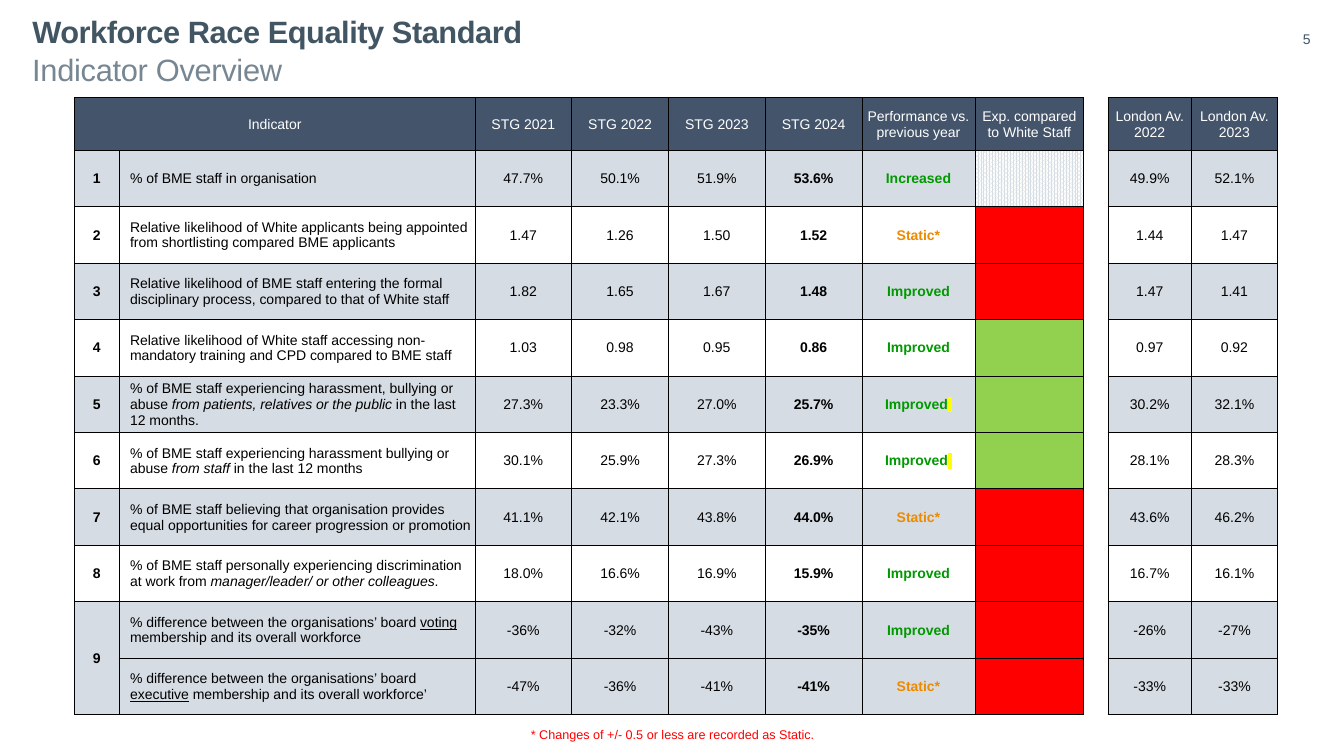
from lxml import etree
from pptx import Presentation
from pptx.dml.color import RGBColor
from pptx.enum.dml import MSO_PATTERN
from pptx.enum.text import MSO_ANCHOR as ANCHOR, MSO_AUTO_SIZE as AUTO_SIZE, PP_ALIGN as ALIGN
from pptx.oxml.ns import qn
from pptx.util import Pt

PX = 9144  # EMU in one px, at 100 px to the inch
FONT = "Arial"
COLORS = {
    "title": "425563", "subtitle": "768692", "header": "44546A", "band": "D6DCE4",
    "white": "FFFFFF", "black": "000000", "red": "FF0000", "green": "92D050",
    "dots": "D6DEE3", "better": "009900", "static": "ED8B00", "marker": "FFFF00",
}
RESULT_COLORS = {"Increased": "better", "Improved": "better", "Static*": "static"}

COLUMN_WIDTHS = [44, 353, 96, 96, 96, 96, 112, 108, 17, 83, 85]
LATEST, RESULT, COMPARED, GAP = 5, 6, 7, 8
HEADER_HEIGHT, ROW_HEIGHT = 52, 56
HEADERS = [
    "Indicator", "", "STG 2021", "STG 2022", "STG 2023", "STG 2024",
    "Performance vs. previous year", "Exp. compared to White Staff", "",
    "London Av. 2022", "London Av. 2023",
]
# number, indicator (_underlined_ or *italic* words), four years, result, comparison, London
INDICATORS = [
    ("1", "% of BME staff in organisation",
     "47.7% 50.1% 51.9% 53.6%", "Increased", "dots", "49.9% 52.1%"),
    ("2", "Relative likelihood of White applicants being appointed from shortlisting compared BME applicants",
     "1.47 1.26 1.50 1.52", "Static*", "red", "1.44 1.47"),
    ("3", "Relative likelihood of BME staff entering the formal disciplinary process, compared to that of White staff",
     "1.82 1.65 1.67 1.48", "Improved", "red", "1.47 1.41"),
    ("4", "Relative likelihood of White staff accessing non-mandatory training and CPD compared to BME staff",
     "1.03 0.98 0.95 0.86", "Improved", "green", "0.97 0.92"),
    ("5", "% of BME staff experiencing harassment, bullying or abuse *from patients, relatives or the public* in the last 12 months.",
     "27.3% 23.3% 27.0% 25.7%", "Improved", "green", "30.2% 32.1%"),
    ("6", "% of BME staff experiencing harassment bullying or abuse *from staff* in the last 12 months",
     "30.1% 25.9% 27.3% 26.9%", "Improved", "green", "28.1% 28.3%"),
    ("7", "% of BME staff believing that organisation provides equal opportunities for career progression or promotion",
     "41.1% 42.1% 43.8% 44.0%", "Static*", "red", "43.6% 46.2%"),
    ("8", "% of BME staff personally experiencing discrimination at work from *manager/leader/ or other colleagues*.",
     "18.0% 16.6% 16.9% 15.9%", "Improved", "red", "16.7% 16.1%"),
    ("9", "% difference between the organisations’ board _voting_ membership and its overall workforce",
     "-36% -32% -43% -35%", "Improved", "red", "-26% -27%"),
    ("", "% difference between the organisations’ board _executive_ membership and its overall workforce’",
     "-47% -36% -41% -41%", "Static*", "red", "-33% -33%"),
]
HIGHLIGHTED = ("5", "6")


def rgb(name):
    return RGBColor.from_string(COLORS[name])


def set_font(font, size, color, bold=False):
    font.name, font.size, font.bold = FONT, Pt(size), bold
    font.color.rgb = rgb(color)


def place_text(shape, box, text, size, color, bold=False, align=ALIGN.LEFT, inset=(0, 0), spacing=0):
    """Write one line in a text shape; spacing is in hundredths of a point."""
    shape.left, shape.top, shape.width, shape.height = (length * PX for length in box)
    frame = shape.text_frame
    frame.word_wrap, frame.auto_size = True, AUTO_SIZE.NONE
    frame.vertical_anchor = ANCHOR.TOP
    frame.margin_left = frame.margin_right = inset[0] * PX
    frame.margin_top = frame.margin_bottom = inset[1] * PX
    para = frame.paragraphs[0]
    para.alignment = align
    span = para.add_run()
    span.text = text
    set_font(para.font, size, color, bold)
    if spacing:
        span._r.get_or_add_rPr().set("spc", str(spacing))
    return para


def add_text(slide, box, *args, **options):
    return place_text(slide.shapes.add_textbox(0, 0, 0, 0), box, *args, **options)


def add_heading(slide, box):
    left, top, width, height = box
    para = place_text(slide.shapes.title, (left, top, width, 33),
                      "Workforce Race Equality Standard", 22, "title", bold=True, spacing=-30)
    para.line_spacing = 0.9
    add_text(slide, (left, top + 33, width, height - 33), "Indicator Overview", 22, "subtitle", spacing=-20)


def set_borders(cell, sides):
    """Draw thin black lines on the named sides, and none on the others."""
    properties = cell._tc.get_or_add_tcPr()
    for position, side in enumerate("LRTB"):
        line = etree.Element(qn(f"a:ln{side}"), w=str(Pt(0.5)))
        if side in sides:
            fill = etree.SubElement(line, qn("a:solidFill"))
            etree.SubElement(fill, qn("a:srgbClr"), val=COLORS["black"])
        else:
            etree.SubElement(line, qn("a:noFill"))
        properties.insert(position, line)


def fill_cell(cell, color):
    if color is None:
        cell.fill.background()
    elif color == "dots":
        cell.fill.patterned()
        cell.fill.pattern = MSO_PATTERN.PERCENT_80
        cell.fill.fore_color.rgb, cell.fill.back_color.rgb = rgb("dots"), rgb("white")
    else:
        cell.fill.solid()
        cell.fill.fore_color.rgb = rgb(color)


def write_cell(cell, text, color="black", bold=False, align=ALIGN.CENTER):
    """Write text whose *starred* words are italic and _underscored_ words underlined."""
    cell.vertical_anchor = ANCHOR.MIDDLE
    cell.margin_left = (11 if align == ALIGN.LEFT else 1) * PX
    cell.margin_right = cell.margin_top = PX
    cell.margin_bottom = 0
    para = cell.text_frame.paragraphs[0]
    para.alignment = align
    mark = "_" if "_" in text else "*"
    pieces = text.split(mark) if text.count(mark) == 2 or mark == "_" else [text]
    for index, piece in enumerate(pieces):
        span = para.add_run()
        span.text = piece
        if index == 1 and mark == "_":
            span.font.underline = True
        elif index == 1:
            span.font.italic = True
    set_font(para.font, 10, color, bold)
    return para


def add_marker(para):
    """End the paragraph with a highlighted space."""
    span = para.add_run()
    span.text = " "
    highlight = etree.SubElement(span._r.get_or_add_rPr(), qn("a:highlight"))
    etree.SubElement(highlight, qn("a:srgbClr"), val=COLORS["marker"])


def fill_indicator_row(table, row, indicator):
    number, name, years, result, compared, london = indicator
    texts = [number, name, *years.split(), result, "", "", *london.split()]
    band = "band" if row % 2 or not number else "white"
    for column, text in enumerate(texts):
        cell = table.cell(row, column)
        fill_cell(cell, {COMPARED: compared, GAP: None}.get(column, band))
        if not text:
            continue
        para = write_cell(
            cell, text,
            color=RESULT_COLORS[result] if column == RESULT else "black",
            bold=column in (0, LATEST, RESULT),
            align=ALIGN.LEFT if column == 1 else ALIGN.CENTER,
        )
        if column == RESULT and number in HIGHLIGHTED:
            add_marker(para)


def add_indicator_table(slide, box):
    row_count = len(INDICATORS) + 1
    frame = slide.shapes.add_table(row_count, len(COLUMN_WIDTHS), *(length * PX for length in box))
    table = frame.table
    table.first_row = table.horz_banding = False
    for column, width in zip(table.columns, COLUMN_WIDTHS):
        column.width = width * PX
    for index, row in enumerate(table.rows):
        row.height = (ROW_HEIGHT if index else HEADER_HEIGHT) * PX
    for column, text in enumerate(HEADERS):
        cell = table.cell(0, column)
        fill_cell(cell, None if column == GAP else "header")
        if text:
            write_cell(cell, text, color="white")
    for row, indicator in enumerate(INDICATORS, start=1):
        fill_indicator_row(table, row, indicator)
    for row in range(row_count):
        for column in range(len(COLUMN_WIDTHS)):
            set_borders(table.cell(row, column), "LR" if column == GAP else "LRTB")
    table.cell(0, 0).merge(table.cell(0, 1))
    table.cell(row_count - 2, 0).merge(table.cell(row_count - 1, 0))


def main():
    deck = Presentation()
    deck.slide_width, deck.slide_height = 1333 * PX, 750 * PX
    slide = deck.slides.add_slide(deck.slide_layouts[5])
    add_heading(slide, (32, 17, 860, 84))
    add_text(slide, (1267, 30, 33, 25), "5", 10, "title", align=ALIGN.RIGHT)
    table_height = HEADER_HEIGHT + ROW_HEIGHT * len(INDICATORS)
    add_indicator_table(slide, (74, 97, sum(COLUMN_WIDTHS), table_height))
    add_text(slide, (74, 716, sum(COLUMN_WIDTHS), 25), "* Changes of +/- 0.5 or less are recorded as Static.",
             9, "red", align=ALIGN.CENTER, inset=(10, 5))
    deck.save("out.pptx")


if __name__ == "__main__":
    main()
